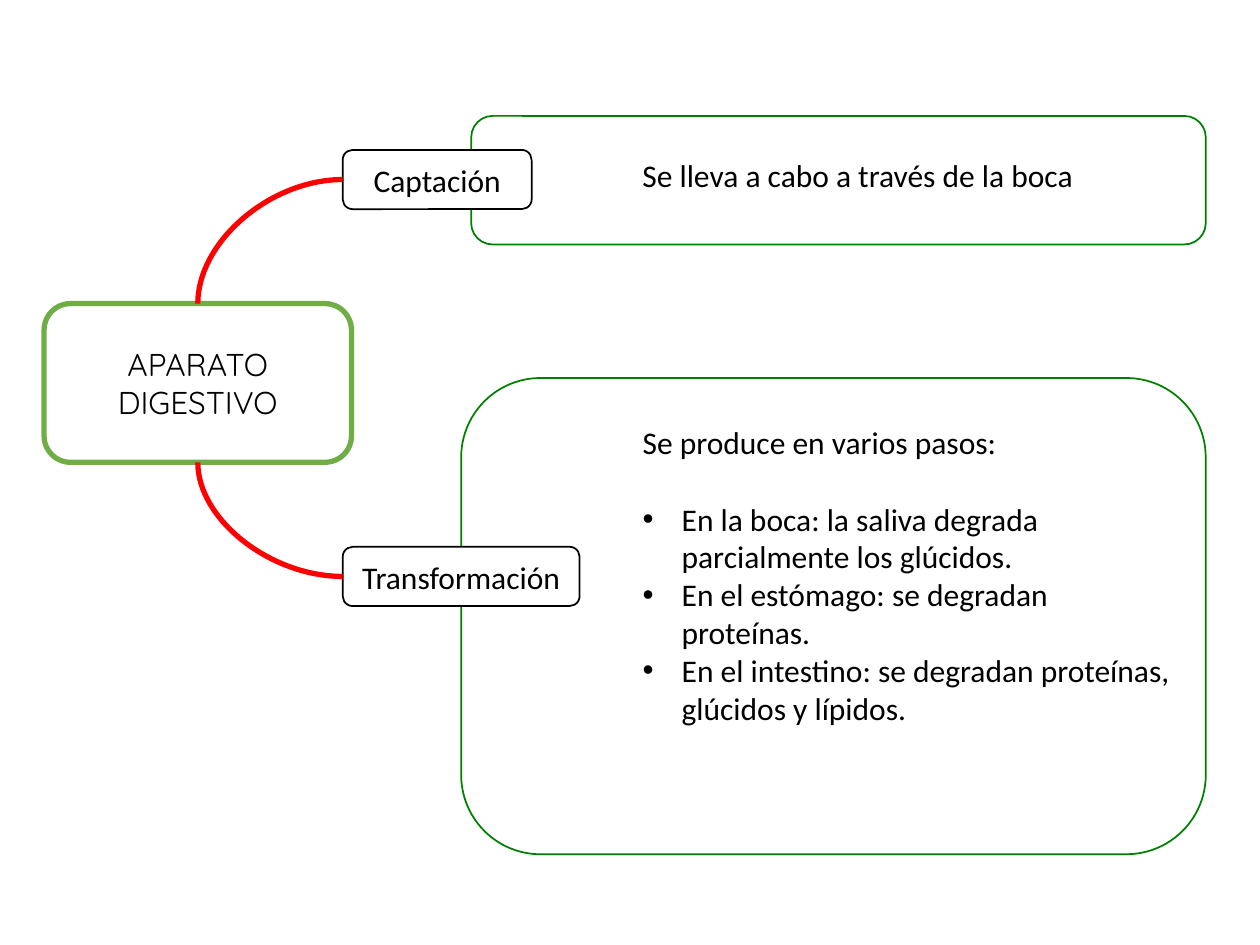
import pptx
import pptx.util
import pptx.dml.color
import pptx.enum.shapes
import pptx.enum.text
from lxml import etree
from pptx.oxml.ns import qn

Inches, Pt = pptx.util.Inches, pptx.util.Pt
SHAPES = pptx.enum.shapes.MSO_SHAPE
CURVE = pptx.enum.shapes.MSO_CONNECTOR.CURVE
ALIGN = pptx.enum.text.PP_ALIGN
ANCHOR = pptx.enum.text.MSO_ANCHOR
GROW = pptx.enum.text.MSO_AUTO_SIZE.SHAPE_TO_FIT_TEXT

# Content: positions are left, top, width, height in inches
TOPIC = ("APARATO DIGESTIVO", (0.35, 2.41, 2.44, 1.26))
FRAMES = [(3.74, 0.92, 5.83, 1.02), (3.66, 3, 5.91, 3.78)]
TOP, BOTTOM, LEFT = 0, 2, 1  # connection sites of a rounded rectangle
STAGES = [
    ("Captación", (2.72, 1.19, 1.5, 0.47), TOP),
    ("Transformación", (2.72, 4.34, 1.88, 0.47), BOTTOM),
]
INTAKE = ("Se lleva a cabo a través de la boca", (5, 1.19, 4.25, 0.4))
STEPS_INTRO = "Se produce en varios pasos:"
STEPS = [
    "En la boca: la saliva degrada parcialmente los glúcidos.",
    "En el estómago: se degradan proteínas.",
    "En el intestino: se degradan proteínas, glúcidos y lípidos.",
]
STEPS_AT = (5, 3.31, 4.41, 2.52)
STEP_INDENT = 0.31


def color(hex_code):
    return pptx.dml.color.RGBColor.from_string(hex_code)


def set_line(item, hex_code, width):
    item.line.color.rgb = color(hex_code)
    item.line.width = Pt(width)


def format_text(paragraph, font="Calibri", align=ALIGN.LEFT):
    paragraph.alignment = align
    paragraph.space_before = Pt(0)
    for run in paragraph.runs:
        run.font.name = font
        run.font.size = Pt(18)
        run.font.color.rgb = color("000000")


def add_box(at, line, width, text="", font="Calibri"):
    box = slide.shapes.add_shape(SHAPES.ROUNDED_RECTANGLE, *map(Inches, at))
    box.shadow.inherit = False
    set_line(box, line, width)
    if not text:
        box.fill.background()
        return box
    box.fill.solid()
    box.fill.fore_color.rgb = color("FFFFFF")
    box.text_frame.text = text
    box.text_frame.word_wrap = True
    box.text_frame.vertical_anchor = ANCHOR.MIDDLE
    format_text(box.text_frame.paragraphs[0], font, ALIGN.CENTER)
    return box


def set_bullet(paragraph, indent):
    props = paragraph._p.get_or_add_pPr()
    props.set("marL", str(Inches(indent)))
    props.set("indent", str(-Inches(indent)))
    if indent:
        etree.SubElement(props, qn("a:buFont")).set("typeface", "Arial")
        etree.SubElement(props, qn("a:buChar")).set("char", "•")
    else:
        etree.SubElement(props, qn("a:buNone"))


def add_curve(stage, topic, topic_site):
    curve = slide.shapes.add_connector(CURVE, 0, 0, 0, 0)
    curve.begin_connect(stage, LEFT)
    curve.end_connect(topic, topic_site)
    set_line(curve, "FF0000", 3)
    properties = curve._element.spPr
    properties.find(qn("a:prstGeom")).set("prst", "curvedConnector2")
    etree.SubElement(properties, qn("a:effectLst"))


prs = pptx.Presentation()
prs.slide_width, prs.slide_height = Inches(10), Inches(7.5)
slide = prs.slides.add_slide(prs.slide_layouts[1])
title = slide.shapes.title
title._element.getparent().remove(title._element)

# List of transformation steps
steps = slide.placeholders[1]
steps.left, steps.top, steps.width, steps.height = map(Inches, STEPS_AT)
steps.text_frame.text = "\n".join([STEPS_INTRO, *STEPS])
steps.text_frame.word_wrap = True
steps.text_frame.auto_size = GROW
for number, paragraph in enumerate(steps.text_frame.paragraphs):
    format_text(paragraph)
    if number == 0:
        paragraph.space_after = Pt(22)
    set_bullet(paragraph, STEP_INDENT if number else 0)

# Frames and stage labels
for frame_at in FRAMES:
    add_box(frame_at, "008000", 1)
stages = [(add_box(at, "000000", 1, name), site) for name, at, site in STAGES]

# Intake description
intake_text, intake_at = INTAKE
intake = slide.shapes.add_textbox(*map(Inches, intake_at))
intake.text_frame.text = intake_text
intake.text_frame.word_wrap = True
intake.text_frame.auto_size = GROW
format_text(intake.text_frame.paragraphs[0])

# Central topic and its branches
topic_text, topic_at = TOPIC
topic = add_box(topic_at, "70AD47", 3, topic_text, "Quicksand")
for stage, site in stages:
    add_curve(stage, topic, site)

prs.save("out.pptx")
